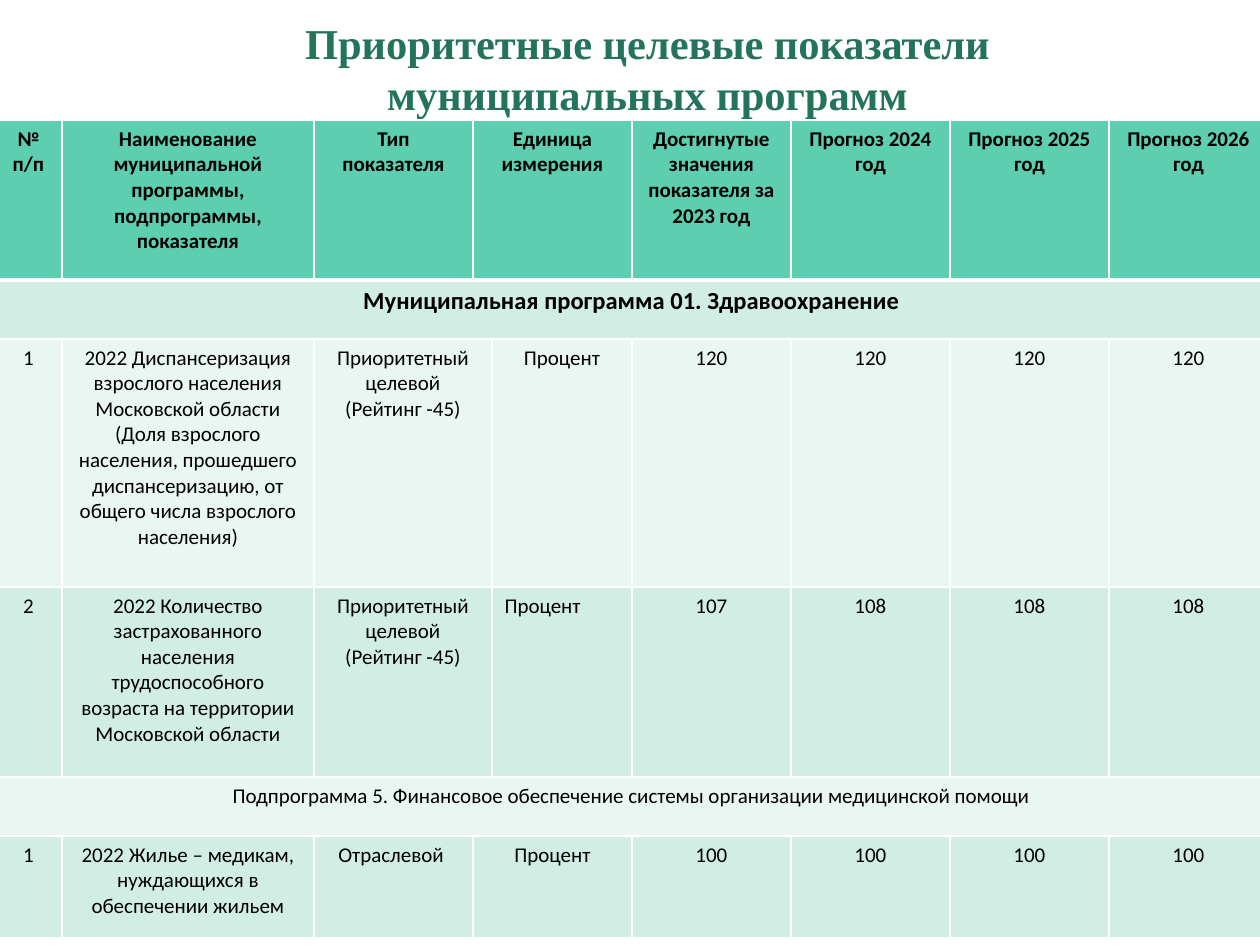
"""Build a slide with the priority target indicators of municipal programs."""
from dataclasses import dataclass
from typing import Any

from lxml import etree
from pptx import Presentation
from pptx import util as u
from pptx.dml.color import RGBColor
from pptx.enum import text
from pptx.oxml.ns import qn

SCALE = 914400 / 126
COLUMNS = [67, 252, 159, 19, 140, 159, 159, 159, 159]
HEADER, DARK, LIGHT = "5DCEAF", "D2EDE3", "EAF6F2"
TITLE_COLOR, WHITE, BLACK = "23735D", "FFFFFF", "000000"
CENTER, LEFT = text.PP_ALIGN.CENTER, text.PP_ALIGN.LEFT
PLAIN = (1, 1, 1, 1, 1, 1, 1, 1, 1)
WIDE_UNIT = (1, 1, 1, 2, 1, 1, 1, 1)
WIDE_TYPE = (1, 1, 2, 1, 1, 1, 1, 1)
FULL = (9,)


@dataclass(frozen=True)
class Row:
    """One table row: its height, fill, column spans and texts."""

    height: int
    fill: str
    spans: tuple[int, ...]
    texts: tuple[str, ...]
    bold: bool = False
    size: int = 12
    left_aligned: tuple[int, ...] = ()


ROWS = [
    Row(160, HEADER, WIDE_UNIT, (
        "№ п/п",
        "Наименование муниципальной программы, подпрограммы, показателя",
        "Тип показателя",
        "Единица измерения",
        "Достигнутые значения показателя за 2023 год",
        *(f"Прогноз {year} год" for year in (2024, 2025, 2026)),
    ), bold=True),
    Row(59, DARK, FULL, ("Муниципальная программа 01. Здравоохранение",), bold=True, size=14),
    Row(248, LIGHT, WIDE_TYPE, (
        "1",
        "2022 Диспансеризация взрослого населения Московской области "
        "(Доля взрослого населения, прошедшего диспансеризацию, "
        "от общего числа взрослого населения)",
        "Приоритетный целевой (Рейтинг -45)",
        "Процент", "120", "120", "120", "120",
    )),
    Row(190, DARK, WIDE_TYPE, (
        "2",
        "2022 Количество застрахованного населения трудоспособного возраста "
        "на территории Московской области",
        "Приоритетный целевой (Рейтинг -45)",
        "Процент", "107", "108", "108", "108",
    ), left_aligned=(3,)),
    Row(59, LIGHT, FULL, (
        "Подпрограмма 5. Финансовое обеспечение системы организации медицинской помощи",
    )),
    Row(102, DARK, WIDE_UNIT, (
        "1",
        "2022 Жилье – медикам, нуждающихся в обеспечении жильем",
        "Отраслевой ",
        "Процент", "100", "100", "100", "100",
    )),
]


def px(value: int) -> u.Emu:
    """Turn pixels into EMU."""
    return u.Emu(round(value * SCALE))


def color(value: str) -> RGBColor:
    """Turn a hex string into a colour."""
    return RGBColor.from_string(value)


def set_all(target: Any, values: dict[str, Any]) -> None:
    """Set every attribute named in a dict."""
    for name, value in values.items():
        setattr(target, name, value)


def format_font(font: Any, name: str, size: float, bold: bool, shade: str) -> None:
    """Format the font of a span."""
    set_all(font, {"name": name, "size": u.Pt(size), "bold": bold})
    font.color.rgb = color(shade)


def add_borders(cell: Any, widths: dict[str, int]) -> None:
    """Draw white borders of the given point widths around a cell."""
    properties = cell._tc.get_or_add_tcPr()
    for side, width in widths.items():
        line = etree.SubElement(properties, qn(f"a:ln{side}"), w=str(u.Pt(width)))
        fill = etree.SubElement(line, qn("a:solidFill"))
        etree.SubElement(fill, qn("a:srgbClr"), val=WHITE)


def add_title(page: Any, lines: list[str]) -> None:
    """Place and format the slide title."""
    box = page.shapes.title
    set_all(box, {"left": px(25), "top": px(16), "width": px(1245), "height": px(104)})
    set_all(box.text_frame, {
        "word_wrap": True,
        "auto_size": text.MSO_AUTO_SIZE.NONE,
        "vertical_anchor": text.MSO_ANCHOR.MIDDLE,
        "margin_top": 0,
        "margin_bottom": 0,
    })
    para = box.text_frame.paragraphs[0]
    set_all(para, {"alignment": CENTER, "line_spacing": u.Pt(29), "space_before": u.Pt(0)})
    for index, line in enumerate(lines):
        if index:
            para.add_line_break()
        span = para.add_run()
        span.text = line
        format_font(span.font, "Times New Roman", 24.3, True, TITLE_COLOR)


def fill_row(table: Any, index: int, row: Row) -> None:
    """Format, merge and fill the cells of one row."""
    table.rows[index].height = px(row.height)
    widths = {"L": 1, "R": 1, "T": 3 if index == 1 else 1, "B": 3 if index == 0 else 1}
    for cell in table.rows[index].cells:
        add_borders(cell, widths)
        cell.fill.solid()
        cell.fill.fore_color.rgb = color(row.fill)
    column = 0
    for position, (width, words) in enumerate(zip(row.spans, row.texts)):
        cell = table.cell(index, column)
        if width > 1:
            cell.merge(table.cell(index, column + width - 1))
        para = cell.text_frame.paragraphs[0]
        para.alignment = LEFT if position in row.left_aligned else CENTER
        span = para.add_run()
        span.text = words
        format_font(span.font, "Calibri", row.size, row.bold, BLACK)
        column += width


def add_indicators(page: Any) -> None:
    """Add the table of indicators."""
    height = sum(row.height for row in ROWS)
    frame = page.shapes.add_table(
        len(ROWS), len(COLUMNS), px(-5), px(120), px(sum(COLUMNS)), px(height))
    table = frame.table
    set_all(table, {"first_row": False, "horz_banding": False})
    for column, width in zip(table.columns, COLUMNS):
        column.width = px(width)
    for index, row in enumerate(ROWS):
        fill_row(table, index, row)


def main() -> None:
    """Build and save the deck."""
    deck = Presentation()
    set_all(deck, {"slide_width": px(1260), "slide_height": px(945)})
    page = deck.slides.add_slide(deck.slide_layouts[5])
    add_title(page, ["Приоритетные целевые показатели", "муниципальных программ"])
    add_indicators(page)
    deck.save("out.pptx")


if __name__ == "__main__":
    main()
